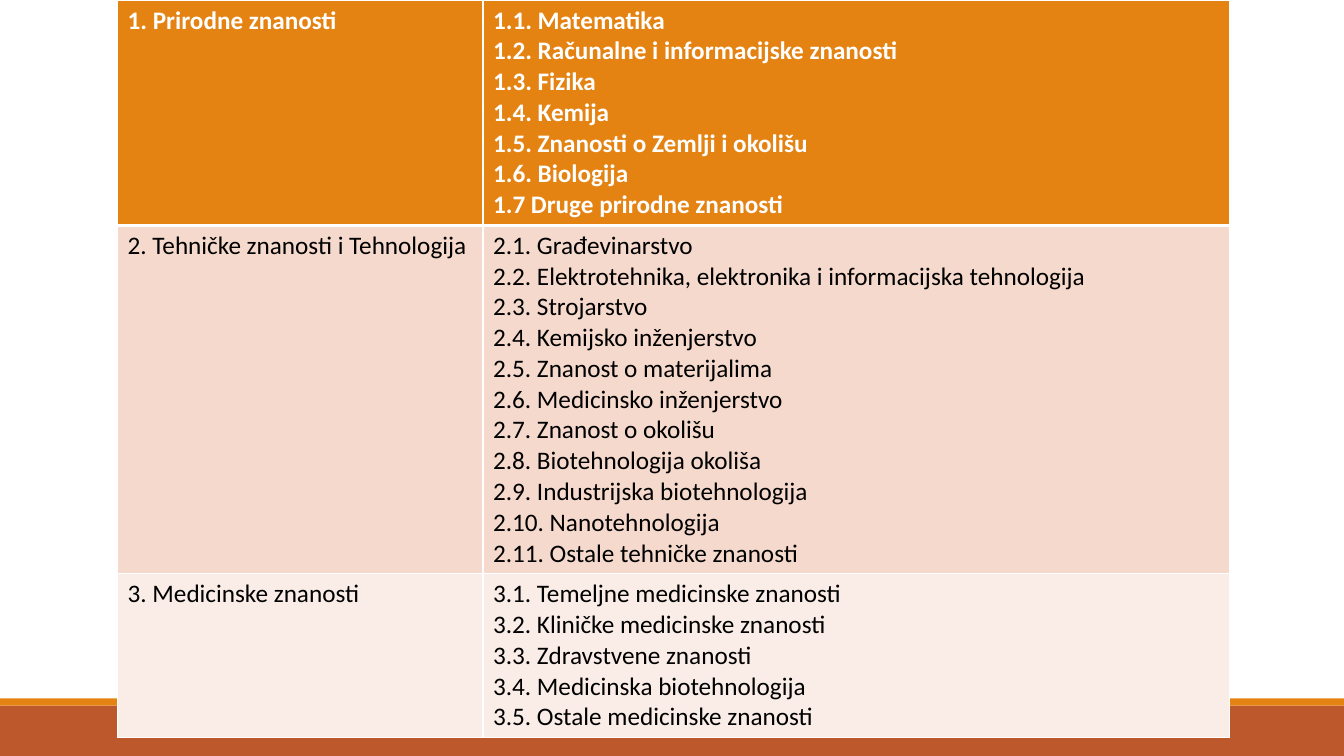
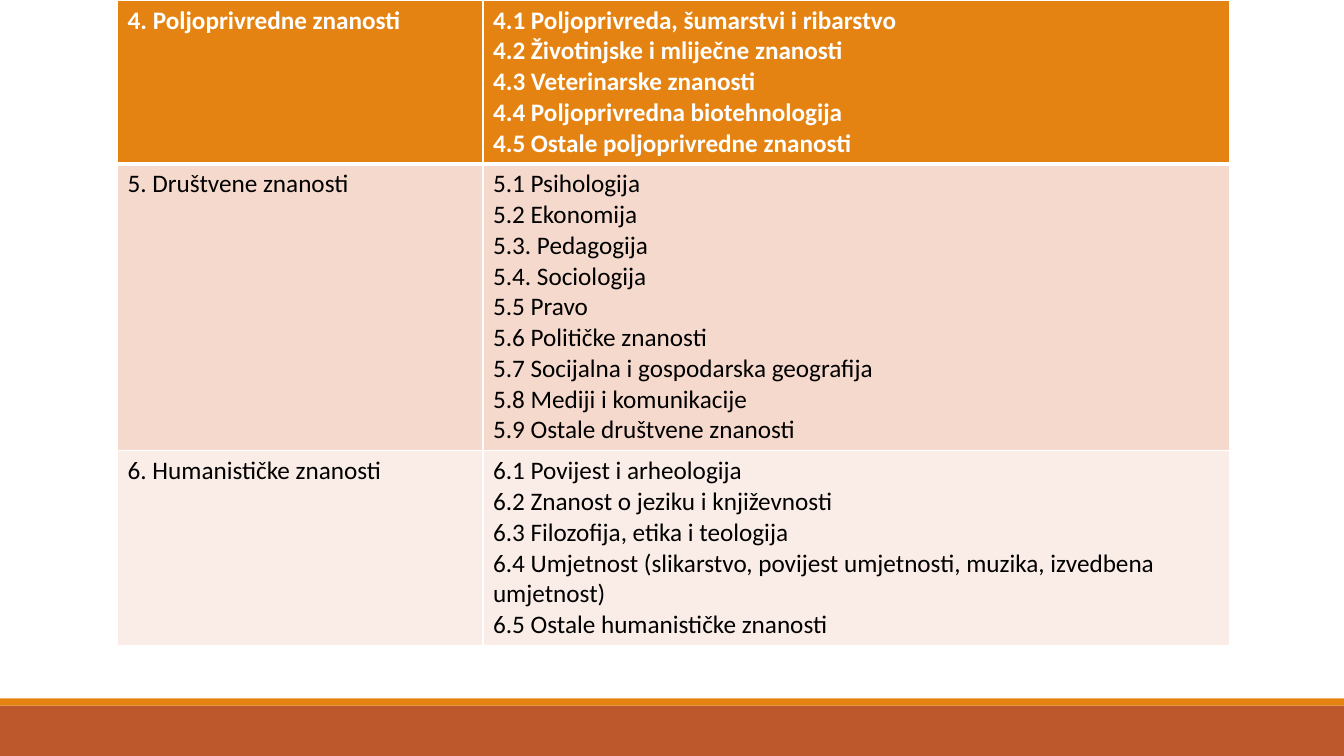
from math import ceil

from pptx import Presentation
from pptx import util as u
from pptx.dml.color import RGBColor
from pptx.enum import shapes
from pptx.oxml import parse_xml
from pptx.oxml.ns import nsdecls

# Shared look
WIDE, HIGH = 1280, 720
WHITE, BLACK = "FFFFFF", "000000"
ORANGE, RUST = "E48312", "BD582C"
BANDS = [(672, 48, RUST), (665, 7, ORANGE)]
HEAD = {"size": u.Pt(18), "name": "Calibri", "bold": True}
BODY = {**HEAD, "bold": False}
# Fill, text colour, font and bottom border width of each row
ROWS = [(ORANGE, WHITE, HEAD, 3), ("F5D9CC", BLACK, BODY, 1),
        ("FAEDE7", BLACK, BODY, 1)]
LEFT, COLS = 112, (348, 711)
LINE, PAD, CHARS = 29, 10, 70

# Each slide holds groups of a field and its branches
SLIDES = [
    [
        ("1. Prirodne znanosti", [
            "1.1. Matematika",
            "1.2. Računalne i informacijske znanosti",
            "1.3. Fizika",
            "1.4. Kemija",
            "1.5. Znanosti o Zemlji i okolišu",
            "1.6. Biologija",
            "1.7 Druge prirodne znanosti"]),
        ("2. Tehničke znanosti i Tehnologija", [
            "2.1. Građevinarstvo",
            "2.2. Elektrotehnika, elektronika i informacijska tehnologija",
            "2.3. Strojarstvo",
            "2.4. Kemijsko inženjerstvo",
            "2.5. Znanost o materijalima",
            "2.6. Medicinsko inženjerstvo",
            "2.7. Znanost o okolišu",
            "2.8. Biotehnologija okoliša",
            "2.9. Industrijska biotehnologija",
            "2.10. Nanotehnologija",
            "2.11. Ostale tehničke znanosti"]),
        ("3. Medicinske znanosti", [
            "3.1. Temeljne medicinske znanosti",
            "3.2. Kliničke medicinske znanosti",
            "3.3. Zdravstvene znanosti",
            "3.4. Medicinska biotehnologija",
            "3.5. Ostale medicinske znanosti"]),
    ],
    [
        ("4. Poljoprivredne znanosti", [
            "4.1 Poljoprivreda, šumarstvi i ribarstvo",
            "4.2 Životinjske i mliječne znanosti",
            "4.3 Veterinarske znanosti",
            "4.4 Poljoprivredna biotehnologija",
            "4.5 Ostale poljoprivredne znanosti"]),
        ("5. Društvene znanosti", [
            "5.1 Psihologija",
            "5.2 Ekonomija",
            "5.3. Pedagogija",
            "5.4. Sociologija",
            "5.5 Pravo",
            "5.6 Političke znanosti",
            "5.7 Socijalna i gospodarska geografija",
            "5.8 Mediji i komunikacije",
            "5.9 Ostale društvene znanosti"]),
        ("6. Humanističke znanosti", [
            "6.1 Povijest i arheologija",
            "6.2 Znanost o jeziku i književnosti",
            "6.3 Filozofija, etika i teologija",
            "6.4 Umjetnost (slikarstvo, povijest umjetnosti, muzika, "
            "izvedbena umjetnost)",
            "6.5 Ostale humanističke znanosti"]),
    ],
]


def px(n):
    return u.Emu(n * 9525)


def paint(fill, tone):
    fill.solid()
    fill.fore_color.rgb = RGBColor.from_string(tone)


def add_band(slide, top, high, tone):
    band = slide.shapes.add_shape(shapes.MSO_SHAPE.RECTANGLE, 0, px(top),
                                  px(WIDE), px(high))
    band.shadow.inherit = False
    band.line.fill.background()
    paint(band.fill, tone)


def set_edges(cell, top, base):
    """Borders come before the fill in the cell's properties."""
    props = cell._tc.get_or_add_tcPr()
    widths = {"lnL": 1, "lnR": 1, "lnT": top, "lnB": base}
    for i, (tag, wide) in enumerate(widths.items()):
        props.insert(i, parse_xml(
            f'<a:{tag} {nsdecls("a")} w="{u.Pt(wide)}"><a:solidFill>'
            f'<a:srgbClr val="{WHITE}"/></a:solidFill></a:{tag}>'))


def fill_cell(cell, lines, look, top):
    tone, ink, font, base = look
    paint(cell.fill, tone)
    set_edges(cell, top, base)
    cell.text = "\n".join(lines)
    for para in cell.text_frame.paragraphs:
        for run in para.runs:
            for key, value in font.items():
                setattr(run.font, key, value)
            run.font.color.rgb = RGBColor.from_string(ink)


def add_grid(slide, groups):
    highs = [LINE * sum(ceil(len(t) / CHARS) for t in items) + PAD
             for _, items in groups]
    grid = slide.shapes.add_table(len(groups), len(COLS), px(LEFT), 0,
                                  px(sum(COLS)), px(sum(highs))).table
    for col, wide in zip(grid.columns, COLS):
        col.width = px(wide)
    top = 1
    for r, ((field, items), look) in enumerate(zip(groups, ROWS)):
        grid.rows[r].height = px(highs[r])
        for c, lines in enumerate(([field], items)):
            fill_cell(grid.cell(r, c), lines, look, top)
        top = look[-1]


def main():
    deck = Presentation()
    deck.slide_width, deck.slide_height = px(WIDE), px(HIGH)
    for groups in SLIDES:
        slide = deck.slides.add_slide(deck.slide_layouts[6])
        for band in BANDS:
            add_band(slide, *band)
        add_grid(slide, groups)
    deck.save("out.pptx")


if __name__ == "__main__":
    main()
